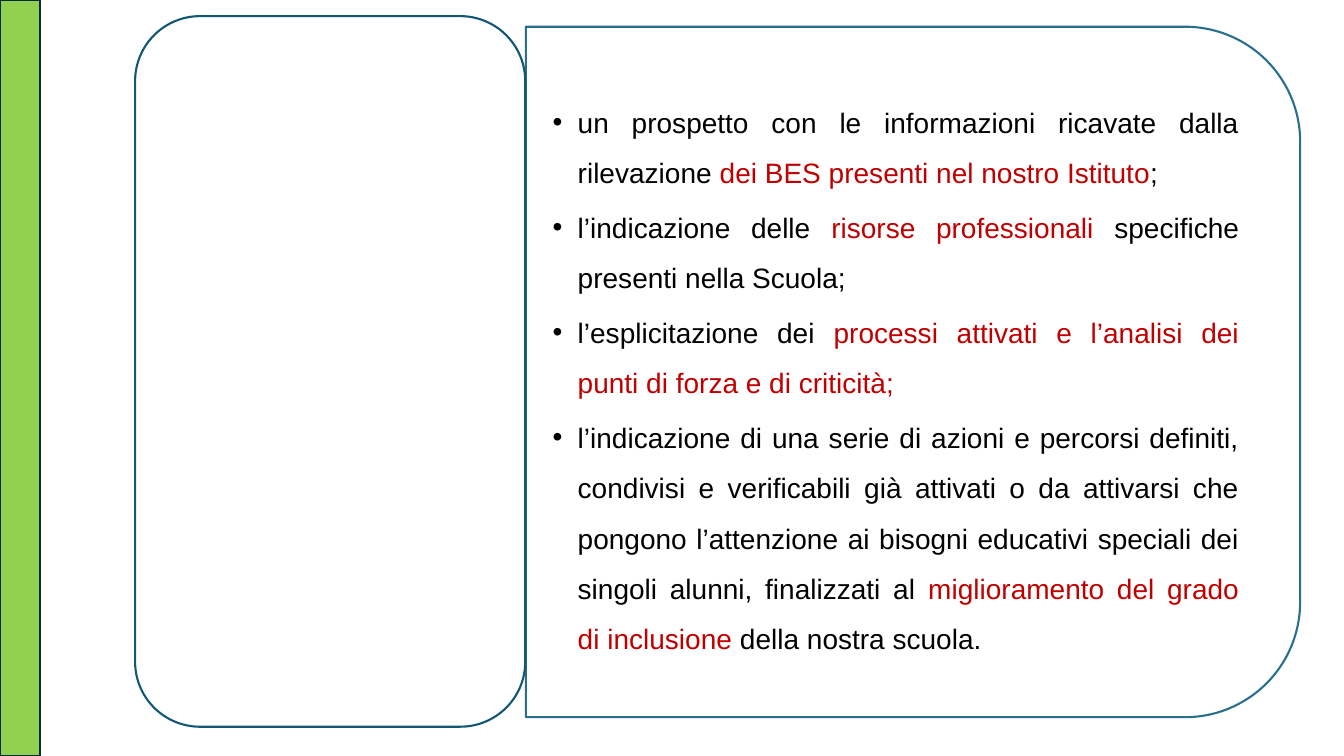
import pptx
import pptx.dml.color
import pptx.enum.shapes
import pptx.enum.text
import pptx.oxml.ns
import pptx.oxml.xmlchemy
import pptx.util
from pptx.util import Inches

COLORS = {
    "white": "FFFFFF",
    "text": "000000",
    "highlight": "C00000",
    "panel_line": "156082",
    "card_line": "135776",
    "band": "92D050",
    "band_line": "092A39",
}

POINTS = [
    [
        ("un prospetto con le informazioni ricavate dalla rilevazione ", "text"),
        ("dei BES presenti nel nostro Istituto", "highlight"),
        (";", "text"),
    ],
    [
        ("l’indicazione delle ", "text"),
        ("risorse professionali ", "highlight"),
        ("specifiche presenti nella Scuola;", "text"),
    ],
    [
        ("l’esplicitazione dei ", "text"),
        ("processi attivati e l’analisi dei punti di forza e di criticità;", "highlight"),
    ],
    [
        ("l’indicazione di una serie di azioni e percorsi definiti, condivisi e "
         "verificabili già attivati o da attivarsi che pongono l’attenzione ai "
         "bisogni educativi speciali dei singoli alunni, finalizzati al ", "text"),
        ("miglioramento del grado di inclusione ", "highlight"),
        ("della nostra scuola.", "text"),
    ],
]

PANEL_BOX = (5.63, -0.15, 6.85, 7.68)
POINTS_BOX = (5.21, 0.6, 7.35, 6.18)
CARD_BOX = (1.34, 0.16, 3.87, 7.05)
BAND_BOX = (0, 0, 0.4, 7.5)
OPACITY = 90


def rgb(name):
    return pptx.dml.color.RGBColor.from_string(COLORS[name])


def add_outlined(slide, kind, box, fill, line):
    shape = slide.shapes.add_shape(kind, *map(Inches, box))
    shape.shadow.inherit = False
    shape.fill.solid()
    shape.fill.fore_color.rgb = rgb(fill)
    shape.line.color.rgb = rgb(line)
    shape.line.width = pptx.util.Pt(1.5)
    return shape


def set_opacity(shape, percent):
    for color in shape._element.spPr.iter(pptx.oxml.ns.qn("a:srgbClr")):
        alpha = pptx.oxml.xmlchemy.OxmlElement("a:alpha")
        alpha.set("val", str(percent * 1000))
        color.append(alpha)


def write_points(body):
    body.left, body.top, body.width, body.height = map(Inches, POINTS_BOX)
    frame = body.text_frame
    frame.word_wrap = True
    frame.auto_size = pptx.enum.text.MSO_AUTO_SIZE.NONE
    frame.vertical_anchor = pptx.enum.text.MSO_ANCHOR.MIDDLE
    frame.margin_left = frame.margin_right = Inches(0.27)
    frame.margin_top = frame.margin_bottom = Inches(0.14)
    for index, point in enumerate(POINTS):
        paragraph = frame.add_paragraph() if index else frame.paragraphs[0]
        paragraph.alignment = pptx.enum.text.PP_ALIGN.JUSTIFY
        paragraph.line_spacing = 1.5
        paragraph.space_before = pptx.util.Pt(0)
        paragraph.space_after = pptx.util.Pt(3)
        properties = paragraph._p.get_or_add_pPr()
        properties.set("marL", str(Inches(0.25)))
        properties.set("indent", str(Inches(-0.25)))
        for words, color in point:
            run = paragraph.add_run()
            run.text = words
            run.font.name = "Arial"
            run.font.size = pptx.util.Pt(20)
            run.font.color.rgb = rgb(color)


def main():
    deck = pptx.Presentation()
    deck.slide_width, deck.slide_height = Inches(13.33), Inches(7.5)
    slide = deck.slides.add_slide(deck.slide_layouts[1])
    title, body = slide.placeholders
    title._element.getparent().remove(title._element)

    kinds = pptx.enum.shapes.MSO_SHAPE
    panel = add_outlined(slide, kinds.ROUND_2_SAME_RECTANGLE, PANEL_BOX, "white", "panel_line")
    panel.rotation = 90
    set_opacity(panel, OPACITY)
    panel._element.addnext(body._element)
    write_points(body)
    add_outlined(slide, kinds.ROUNDED_RECTANGLE, CARD_BOX, "white", "card_line")
    add_outlined(slide, kinds.RECTANGLE, BAND_BOX, "band", "band_line")

    deck.save("out.pptx")


if __name__ == "__main__":
    main()
